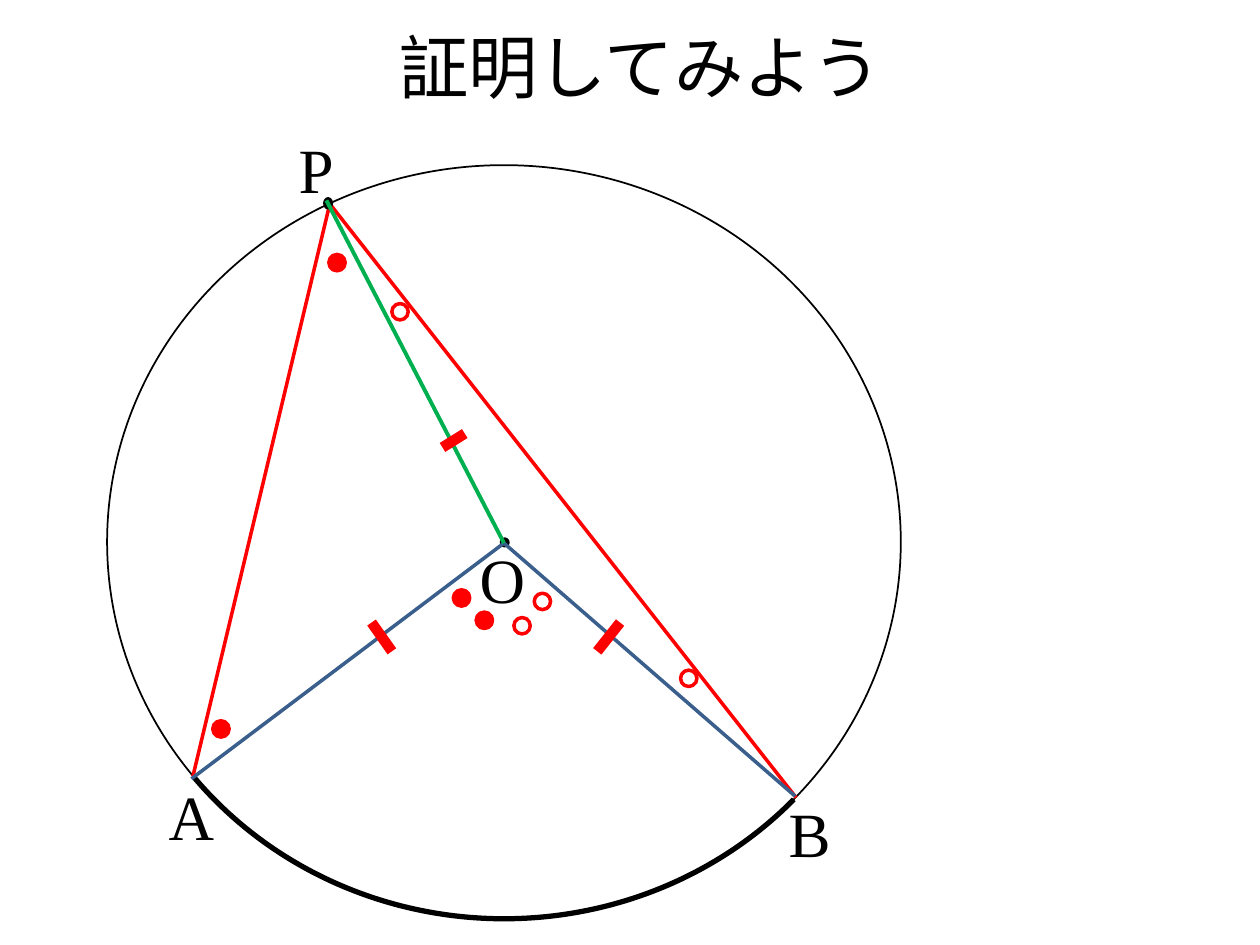
from pptx import Presentation
from pptx.dml.color import RGBColor
from pptx.enum.shapes import MSO_CONNECTOR, MSO_SHAPE
from pptx.enum.text import MSO_ANCHOR, PP_ALIGN
from pptx.oxml.ns import qn
from pptx.util import Cm, Pt

OVAL = MSO_SHAPE.OVAL
ARC = MSO_SHAPE.ARC
STRAIGHT = MSO_CONNECTOR.STRAIGHT
MIDDLE = MSO_ANCHOR.MIDDLE
CENTER = PP_ALIGN.CENTER

BLACK = RGBColor(0x00, 0x00, 0x00)
RED = RGBColor(0xFF, 0x00, 0x00)
BLUE = RGBColor(0x3A, 0x5F, 0x8C)
GREEN = RGBColor(0x00, 0xB0, 0x50)

CIRCLE = (2.16, 3.33, 16, 15.19)
CENTRE = (10.16, 10.95)
MARK_SIZE = 0.33
LABEL_HEIGHT = 1.8


def style_outline(shape, color, width, filled=False):
    shape.shadow.inherit = False
    shape.line.color.rgb = color
    shape.line.width = Pt(width)
    if filled:
        shape.fill.solid()
        shape.fill.fore_color.rgb = color
    else:
        shape.fill.background()


def add_curve(slide, kind, box, color, width, filled=False):
    curve = slide.shapes.add_shape(kind, *map(Cm, box))
    style_outline(curve, color, width, filled)
    return curve


def add_polyline(slide, points, color):
    start, *rest = [(Cm(x), Cm(y)) for x, y in points]
    builder = slide.shapes.build_freeform(*start)
    builder.add_line_segments(rest, close=False)
    style_outline(builder.convert_to_shape(), color, 2)


def add_segment(slide, start, end, color, width):
    segment = slide.shapes.add_connector(STRAIGHT, *map(Cm, start + end))
    segment.line.color.rgb = color
    segment.line.width = Pt(width)
    segment._element.spPr.get_or_add_effectLst() if hasattr(
        segment._element.spPr, "get_or_add_effectLst"
    ) else segment._element.spPr.append(
        segment._element.spPr.makeelement(qn("a:effectLst"), {})
    )


def add_text(slide, text, box, font_name, size):
    frame = slide.shapes.add_textbox(*map(Cm, box)).text_frame
    paragraph = frame.paragraphs[0]
    paragraph.text = text
    paragraph.font.name = font_name
    paragraph.font.size = Pt(size)
    paragraph.font.color.rgb = BLACK
    return frame


def add_title(slide, text):
    frame = add_text(slide, text, (0.71, 0.53, 24.41, 1.6), "Calibri", 39.6)
    frame.word_wrap = True
    frame.vertical_anchor = MIDDLE
    frame.paragraphs[0].alignment = CENTER


def add_point_label(slide, letter, left, top, width):
    frame = add_text(slide, letter, (left, top, width, LABEL_HEIGHT),
                     "Times New Roman", 36)
    frame.word_wrap = False


def add_angle_marks(slide, positions, filled):
    for left, top in positions:
        add_curve(slide, OVAL, (left, top, MARK_SIZE, MARK_SIZE), RED, 2, filled)


def main():
    presentation = Presentation()
    presentation.slide_width = Cm(25.4)
    presentation.slide_height = Cm(19.05)
    slide = presentation.slides.add_slide(presentation.slide_layouts[6])

    add_title(slide, "証明してみよう")
    add_curve(slide, OVAL, CIRCLE, BLACK, 1)
    add_polyline(slide, [(3.89, 15.65), (6.65, 4.11), (16.05, 16.08)], RED)

    arc_ab = add_curve(slide, ARC, CIRCLE, BLACK, 3)
    arc_ab.rotation = 180
    arc_ab.adjustments[0] = 132.975
    arc_ab.adjustments[1] = 193.618

    add_curve(slide, OVAL, (10.11, 10.87, 0.13, 0.13), BLACK, 2, True)
    for label in (
        ("O", 9.42, 10.77, 1.37),
        ("B", 15.65, 15.9, 1.3),
        ("A", 3.15, 15.54, 1.32),
        ("P", 5.77, 2.51, 1.24),
    ):
        add_point_label(slide, *label)

    add_polyline(slide, [(3.86, 15.7), CENTRE, (16.03, 16.05)], BLUE)
    add_curve(slide, OVAL, (6.55, 4.01, 0.13, 0.18), BLACK, 2, True)
    add_segment(slide, (6.58, 4.04), CENTRE, GREEN, 2.25)

    for start, end in (
        ((7.49, 12.55), (7.9, 13.13)),
        ((12.5, 12.55), (12.04, 13.13)),
        ((9.37, 8.74), (8.92, 9.02)),
    ):
        add_segment(slide, start, end, RED, 6)

    open_marks = [(7.9, 6.12), (10.77, 11.96), (10.36, 12.45), (13.72, 13.51)]
    solid_marks = [(6.63, 5.13), (4.29, 14.53), (9.6, 12.34), (9.14, 11.89)]
    add_angle_marks(slide, open_marks, False)
    add_angle_marks(slide, solid_marks, True)

    presentation.save("out.pptx")


if __name__ == "__main__":
    main()
